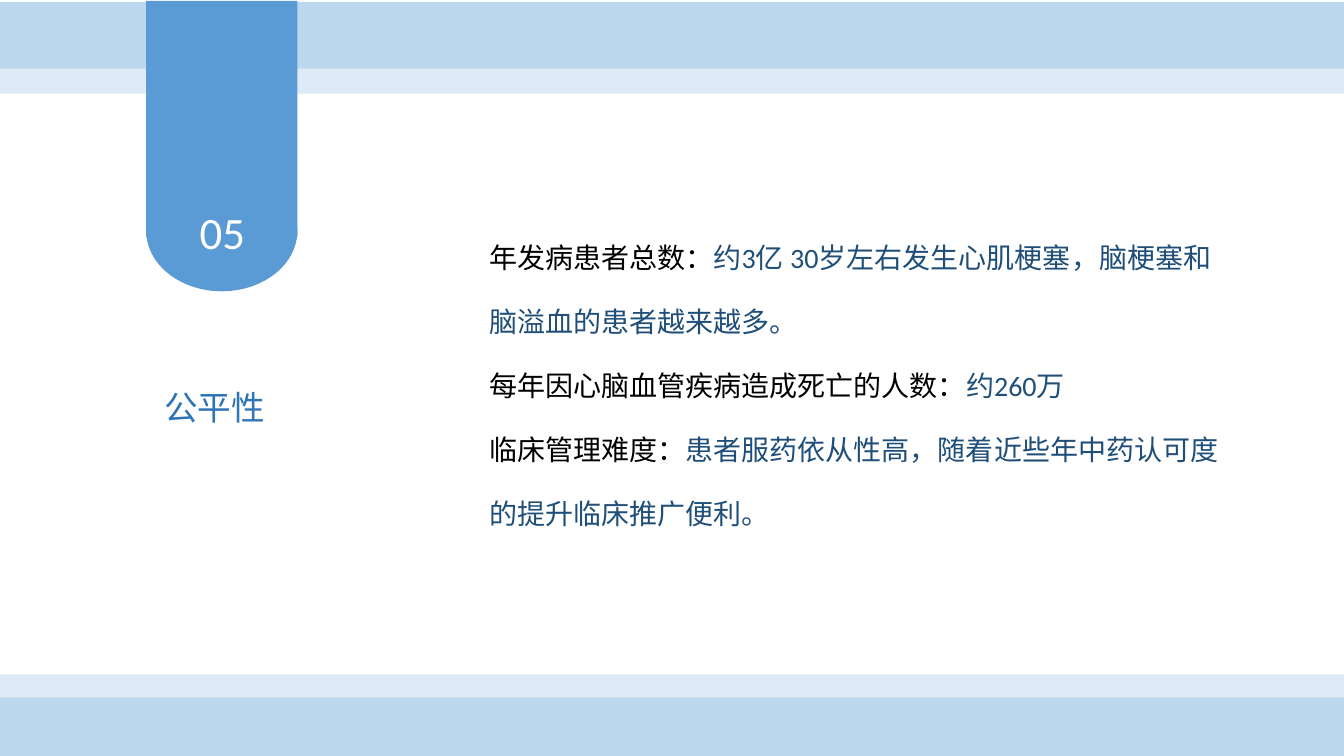
from lxml.etree import SubElement
from pptx import Presentation
from pptx.dml.color import RGBColor
from pptx.enum.shapes import MSO_SHAPE as Shape
from pptx.enum.text import MSO_ANCHOR as Anchor, MSO_AUTO_SIZE as AutoSize, PP_ALIGN as Align
from pptx.oxml.ns import qn
from pptx.util import Inches, Pt

COLORS = {
    "band": "BDD7EE",
    "stripe": "DEEBF7",
    "ribbon": "5B9BD5",
    "heading": "2E75B6",
    "label": "000000",
    "detail": "1F4E79",
    "number": "FFFFFF",
}
SLIDE_WIDTH = 13.33


def place_text(shape, box, anchor=Anchor.TOP):
    shape.left, shape.top, shape.width, shape.height = map(Inches, box)
    frame = shape.text_frame
    settings = {"word_wrap": True, "auto_size": AutoSize.NONE, "vertical_anchor": anchor}
    for name, value in settings.items():
        setattr(frame, name, value)
    return frame


def add_run(paragraph, text, size, color):
    run = paragraph.add_run()
    run.text = text
    for name, value in {"name": "Calibri", "size": Pt(size)}.items():
        setattr(run.font, name, value)
    run.font.color.rgb = RGBColor.from_string(COLORS[color])


presentation = Presentation()
presentation.slide_width = Inches(SLIDE_WIDTH)
presentation.slide_height = Inches(7.5)
slide = presentation.slides.add_slide(presentation.slide_layouts[1])

# Bands at top and bottom, and the round-ended ribbon
decorations = [
    (Shape.RECTANGLE, "band", (0, 0.02, SLIDE_WIDTH, 0.67)),
    (Shape.RECTANGLE, "stripe", (0, 0.68, SLIDE_WIDTH, 0.25)),
    (Shape.RECTANGLE, "ribbon", (1.45, 0.01, 1.5, 2.34)),
    (Shape.OVAL, "ribbon", (1.45, 1.69, 1.5, 1.2)),
    (Shape.RECTANGLE, "band", (0, 6.91, SLIDE_WIDTH, 0.62)),
    (Shape.RECTANGLE, "stripe", (0, 6.69, SLIDE_WIDTH, 0.23)),
]
for kind, color, box in decorations:
    shape = slide.shapes.add_shape(kind, *map(Inches, box))
    shape.shadow.inherit = False
    shape.fill.solid()
    shape.fill.fore_color.rgb = RGBColor.from_string(COLORS[color])
    shape.line.fill.background()

# Section title
title_frame = place_text(slide.shapes.title, (1.53, 3.79, 1.34, 0.5))
title_paragraph = title_frame.paragraphs[0]
title_paragraph.alignment = Align.LEFT
add_run(title_paragraph, "公平性", 24, "heading")

# Section number on the ribbon
number_box = slide.shapes.add_textbox(0, 0, 0, 0)
number_frame = place_text(number_box, (1.61, 1.98, 1.19, 0.64))
number_paragraph = number_frame.paragraphs[0]
number_paragraph.alignment = Align.CENTER
add_run(number_paragraph, "05", 32, "number")

# Body: a black label and a blue detail in each paragraph
facts = [
    ("年发病患者总数：", "约3亿 30岁左右发生心肌梗塞，脑梗塞和脑溢血的患者越来越多。"),
    ("每年因心脑血管疾病造成死亡的人数：", "约260万"),
    ("临床管理难度：", "患者服药依从性高，随着近些年中药认可度的提升临床推广便利。"),
]
body_frame = place_text(slide.placeholders[1], (4.75, 2.04, 7.5, 3.3))
for index, (label, detail) in enumerate(facts):
    paragraph = body_frame.add_paragraph() if index else body_frame.paragraphs[0]
    spacing = {"line_spacing": 1.9, "space_before": Pt(0), "space_after": Pt(0)}
    for name, value in spacing.items():
        setattr(paragraph, name, value)
    properties = paragraph._p.get_or_add_pPr()
    properties.set("marL", "0")
    properties.set("indent", "0")
    SubElement(properties, qn("a:buNone"))
    add_run(paragraph, label, 20, "label")
    add_run(paragraph, detail, 20, "detail")

presentation.save("out.pptx")
